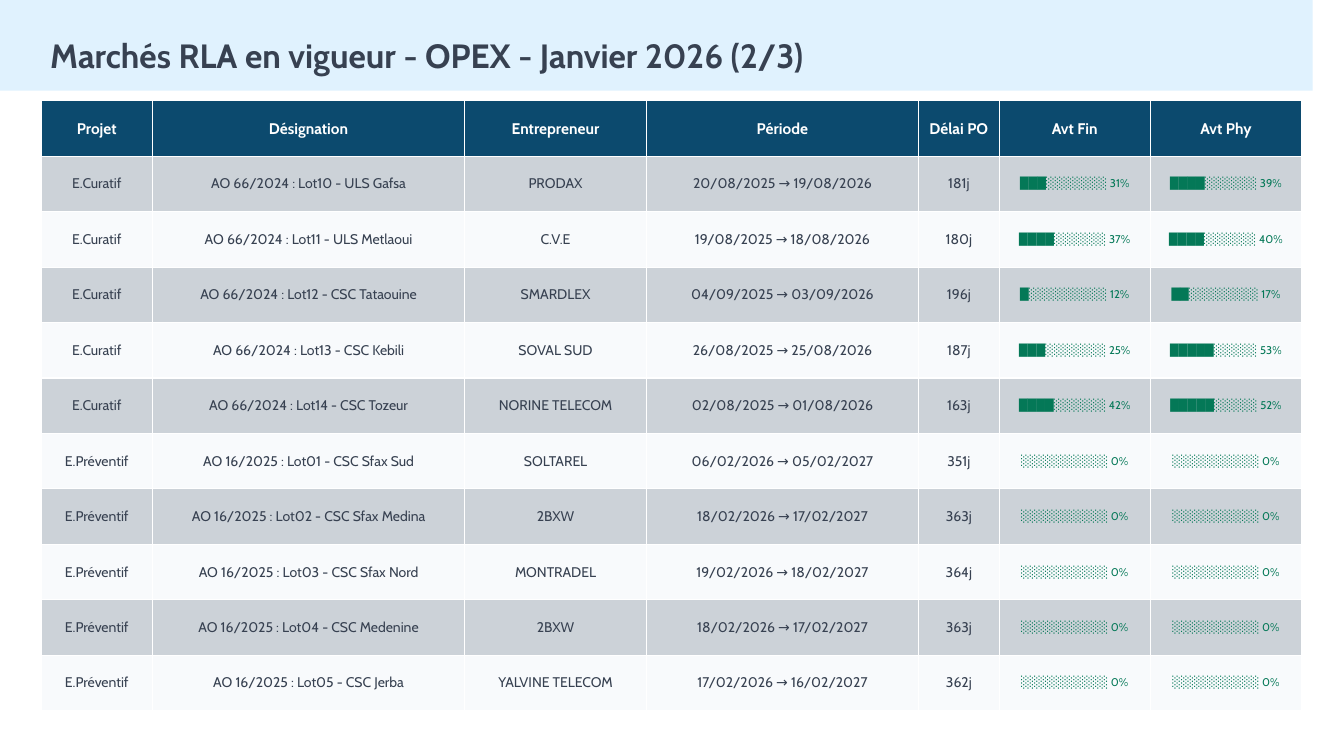
from pptx import Presentation
from pptx.dml.color import RGBColor
from pptx.enum.shapes import MSO_SHAPE as Shape
from pptx.enum.text import MSO_ANCHOR as Anchor, MSO_AUTO_SIZE as Fit, PP_ALIGN as Align
from pptx.util import Inches, Pt

HEADS = ["Projet", "Désignation", "Entrepreneur", "Période", "Délai PO", "Avt Fin", "Avt Phy"]
WIDTHS = [11, 31, 18, 27, 8, 15, 15]
GROUPS = [
    ("E.Curatif", "AO 66/2024", 10, [
        ("ULS Gafsa", "PRODAX", "20/08/2025", "19/08/2026", 181, 31, 39),
        ("ULS Metlaoui", "C.V.E", "19/08/2025", "18/08/2026", 180, 37, 40),
        ("CSC Tataouine", "SMARDLEX", "04/09/2025", "03/09/2026", 196, 12, 17),
        ("CSC Kebili", "SOVAL SUD", "26/08/2025", "25/08/2026", 187, 25, 53),
        ("CSC Tozeur", "NORINE TELECOM", "02/08/2025", "01/08/2026", 163, 42, 52),
    ]),
    ("E.Préventif", "AO 16/2025", 1, [
        ("CSC Sfax Sud", "SOLTAREL", "06/02/2026", "05/02/2027", 351, 0, 0),
        ("CSC Sfax Medina", "2BXW", "18/02/2026", "17/02/2027", 363, 0, 0),
        ("CSC Sfax Nord", "MONTRADEL", "19/02/2026", "18/02/2027", 364, 0, 0),
        ("CSC Medenine", "2BXW", "18/02/2026", "17/02/2027", 363, 0, 0),
        ("CSC Jerba", "YALVINE TELECOM", "17/02/2026", "16/02/2027", 362, 0, 0),
    ]),
]


def hue(code):
    return RGBColor.from_string(code)


def bar(rate):
    full = (rate + 5) // 10
    return "█" * full + "░" * (10 - full) + f" {rate}%"


def lines():
    for kind, tender, first, lots in GROUPS:
        for lot, (site, firm, start, end, days, paid, done) in enumerate(lots, first):
            yield [kind, f"{tender} : Lot{lot:02} - {site}", firm,
                   f"{start} → {end}", f"{days}j", bar(paid), bar(done)]


class Deck:
    font = "Cabin"
    ink = "374151"
    navy = "0C4A6E"
    green = "047857"
    sky = "E0F2FE"
    bands = ["CCD2D8", "F8FAFC"]
    step = 0.1

    def __init__(self):
        self.file = Presentation()
        self.file.slide_width = Inches(13.33)
        self.file.slide_height = Inches(7.5)
        self.slide = self.file.slides.add_slide(self.file.slide_layouts[6])

    def grid(self, *counts):
        return [Inches(count * self.step) for count in counts]

    def label(self, frame, text, size, color, bold=False):
        frame.text = text
        for run in frame.paragraphs[0].runs:
            run.font.name = self.font
            run.font.size = Pt(size)
            run.font.bold = bold
            run.font.color.rgb = hue(color)

    def band(self, *place):
        shape = self.slide.shapes.add_shape(Shape.RECTANGLE, *self.grid(*place))
        shape.shadow.inherit = False
        shape.fill.solid()
        shape.fill.fore_color.rgb = hue(self.sky)
        shape.line.fill.background()

    def title(self, text, *place):
        frame = self.slide.shapes.add_textbox(*self.grid(*place)).text_frame
        frame.word_wrap = False
        frame.auto_size = Fit.SHAPE_TO_FIT_TEXT
        self.label(frame, text, 24, self.ink, True)

    def cell(self, cell, text, fill, *style):
        cell.fill.solid()
        cell.fill.fore_color.rgb = hue(fill)
        cell.vertical_anchor = Anchor.MIDDLE
        self.label(cell.text_frame, text, *style)
        cell.text_frame.paragraphs[0].alignment = Align.CENTER

    def table(self, left, top, tall, heads, widths, rows):
        place = self.grid(left, top, sum(widths), tall * (len(rows) + 1))
        table = self.slide.shapes.add_table(len(rows) + 1, len(heads), *place).table
        for column, width in zip(table.columns, self.grid(*widths)):
            column.width = width
        for row in table.rows:
            row.height = self.grid(tall)[0]
        for col, head in enumerate(heads):
            self.cell(table.cell(0, col), head, self.navy, 11, "FFFFFF", True)
        for row, texts in enumerate(rows):
            for col, text in enumerate(texts):
                style = (8, self.green) if col > 4 else (10, self.ink)
                self.cell(table.cell(row + 1, col), text, self.bands[row % 2], *style)


def main():
    deck = Deck()
    deck.band(0, 0, 130.2, 9)
    deck.title("Marchés RLA en vigueur - OPEX - Janvier 2026 (2/3)", 4, 3, 120, 6)
    deck.table(4.1, 10, 5.5, HEADS, WIDTHS, list(lines()))
    deck.file.save("out.pptx")


if __name__ == "__main__":
    main()
